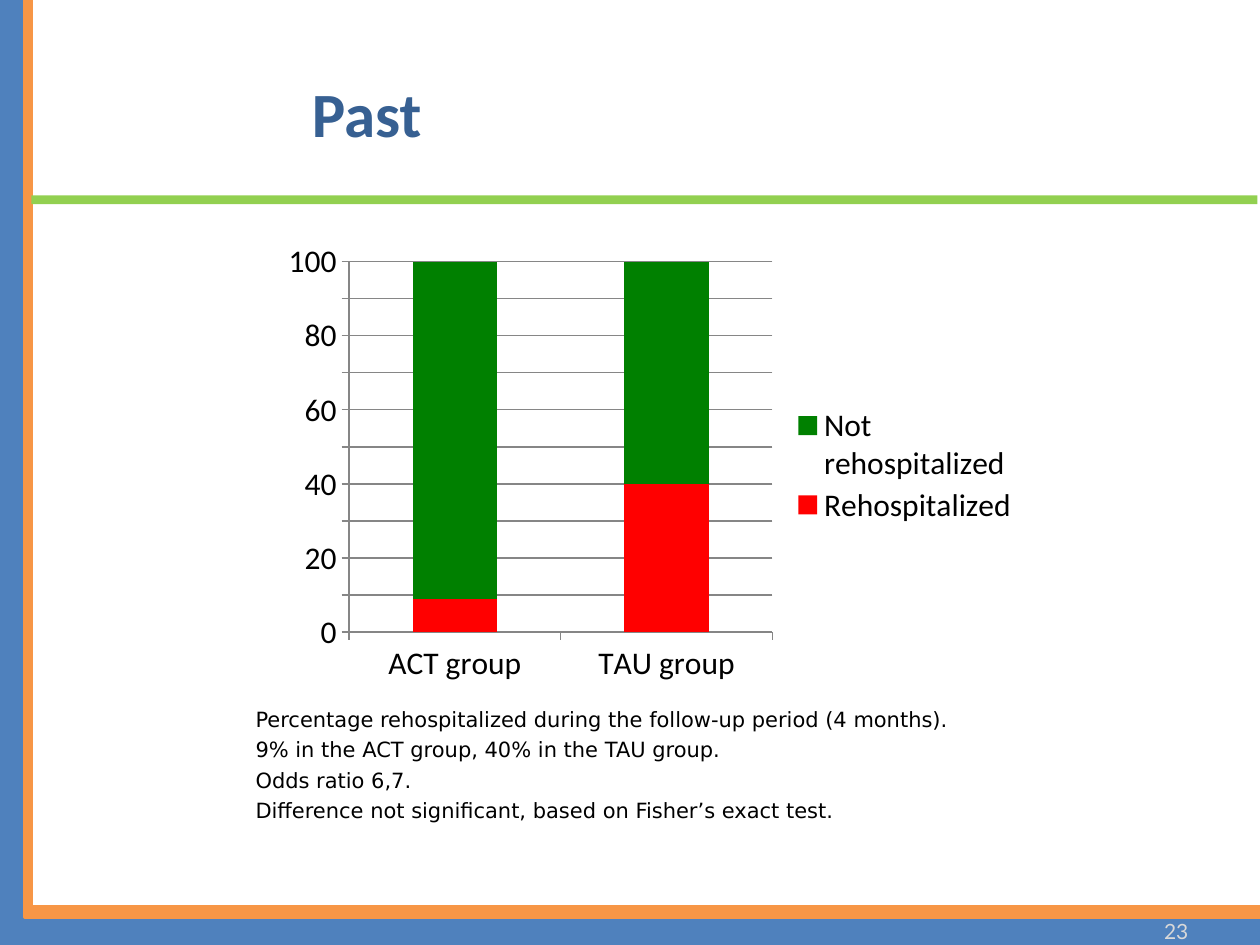
"""Build the slide on rehospitalization in the ACT and TAU groups."""
from lxml import etree
from pptx import Presentation
from pptx.chart.data import CategoryChartData
from pptx.dml.color import RGBColor
from pptx.enum import chart as ch, shapes, text
from pptx.oxml.ns import qn
from pptx.util import Inches, Pt

BLUE = RGBColor(0x4F, 0x81, 0xBD)
ORANGE = RGBColor(0xF7, 0x96, 0x46)
LIME = RGBColor(0x92, 0xD0, 0x50)
NAVY = RGBColor(0x37, 0x60, 0x92)
PALE = RGBColor(0xD9, 0xD9, 0xD9)
GRAY = RGBColor(0x86, 0x86, 0x86)
RED = RGBColor(0xFF, 0, 0)
GREEN = RGBColor(0, 0x80, 0)
BLACK = RGBColor(0, 0, 0)


def style(font, name, size, color, bold=False):
    font.name, font.size, font.bold = name, Pt(size), bold
    font.color.rgb = color


def place(parent, index, inner, **box):
    for old in parent.findall(qn("c:layout")):
        parent.remove(old)
    layout = etree.Element(qn("c:layout"))
    manual = etree.SubElement(layout, qn("c:manualLayout"))
    if inner:
        etree.SubElement(manual, qn("c:layoutTarget")).set("val", "inner")
    for tag in ("xMode", "yMode"):
        etree.SubElement(manual, qn("c:" + tag)).set("val", "edge")
    for tag, value in box.items():
        etree.SubElement(manual, qn("c:" + tag)).set("val", str(value))
    parent.insert(index, layout)


prs = Presentation()
prs.slide_width, prs.slide_height = Inches(10), Inches(7.5)
s = prs.slides.add_slide(prs.slide_layouts[5])

bars = [
    (0, 0, 0.2, 7.5, BLUE, False),
    (0.2, 7.28, 9.8, 0.22, BLUE, False),
    (0.2, 0, 0.05, 7.28, ORANGE, True),
    (0.25, 7.2, 9.75, 0.08, ORANGE, True),
    (0.25, 1.55, 9.73, 0.07, LIME, False),
]
for x, y, w, h, color, outlined in bars:
    sp = s.shapes.add_shape(shapes.MSO_SHAPE.RECTANGLE, Inches(x), Inches(y), Inches(w), Inches(h))
    sp.shadow.inherit = False
    sp.fill.solid()
    sp.fill.fore_color.rgb = color
    if outlined:
        sp.line.color.rgb = color
        sp.line.width = Pt(2)
    else:
        sp.line.fill.background()

title = s.shapes.title
title.left, title.top, title.width, title.height = Inches(0.66), Inches(0.62), Inches(4.5), Inches(0.54)
tf = title.text_frame
tf.text = "Past"
tf.vertical_anchor = text.MSO_ANCHOR.MIDDLE
tf.paragraphs[0].alignment = text.PP_ALIGN.CENTER
style(tf.paragraphs[0].runs[0].font, "Calibri", 36, NAVY, True)

number = s.shapes.add_textbox(Inches(7.2), Inches(7.28), Inches(2.33), Inches(0.22))
tf = number.text_frame
tf.word_wrap = True
tf.vertical_anchor = text.MSO_ANCHOR.MIDDLE
tf.text = "23"
tf.paragraphs[0].alignment = text.PP_ALIGN.RIGHT
style(tf.paragraphs[0].runs[0].font, "Lato", 12, PALE)

data = CategoryChartData()
data.categories = ["ACT group", "TAU group"]
data.add_series("Rehospitalized", (9, 40))
data.add_series("Not rehospitalized", (91, 60))
chart = s.shapes.add_chart(ch.XL_CHART_TYPE.COLUMN_STACKED, Inches(2.17), Inches(1.86),
                           Inches(6), Inches(3.63), data).chart
style(chart.font, "Calibri", 18, BLACK)
chart.has_title = False
chart.has_legend = True
chart.legend.position = ch.XL_LEGEND_POSITION.RIGHT
chart.legend.include_in_layout = False
plot = chart.plots[0]
plot.gap_width, plot.overlap, plot.vary_by_categories = 150, 100, False
for series, color in zip(plot.series, (RED, GREEN)):
    series.format.fill.solid()
    series.format.fill.fore_color.rgb = color
for axis in (chart.category_axis, chart.value_axis):
    axis.major_tick_mark = ch.XL_TICK_MARK.OUTSIDE
    axis.format.line.color.rgb = GRAY
axis = chart.value_axis
axis.minimum_scale, axis.maximum_scale, axis.major_unit = 0, 100, 10
axis.has_major_gridlines = True
axis.major_gridlines.format.line.color.rgb = GRAY
plot_area = chart.element.find(".//" + qn("c:plotArea"))
legend = chart.element.find(".//" + qn("c:legend"))
place(plot_area, 0, True, x=0.1, y=0.06, w=0.56, h=0.81)
place(legend, 1, False, x=0.68, y=0.37, w=0.31, h=0.27)

notes = [
    "Percentage rehospitalized during the follow-up period (4 months).",
    "9% in the ACT group, 40% in the TAU group.",
    "Odds ratio 6,7.",
    "Difference not significant, based on Fisher’s exact test.",
]
tf = s.shapes.add_textbox(Inches(1.93), Inches(5.56), Inches(6), Inches(1.65)).text_frame
tf.word_wrap = True
tf.text = "\n".join(notes)
for i, p in enumerate(tf.paragraphs):
    p.space_before = Pt(2.9 if i else 0)
    style(p.runs[0].font, "DejaVu Sans", 12, BLACK)

prs.save("out.pptx")
